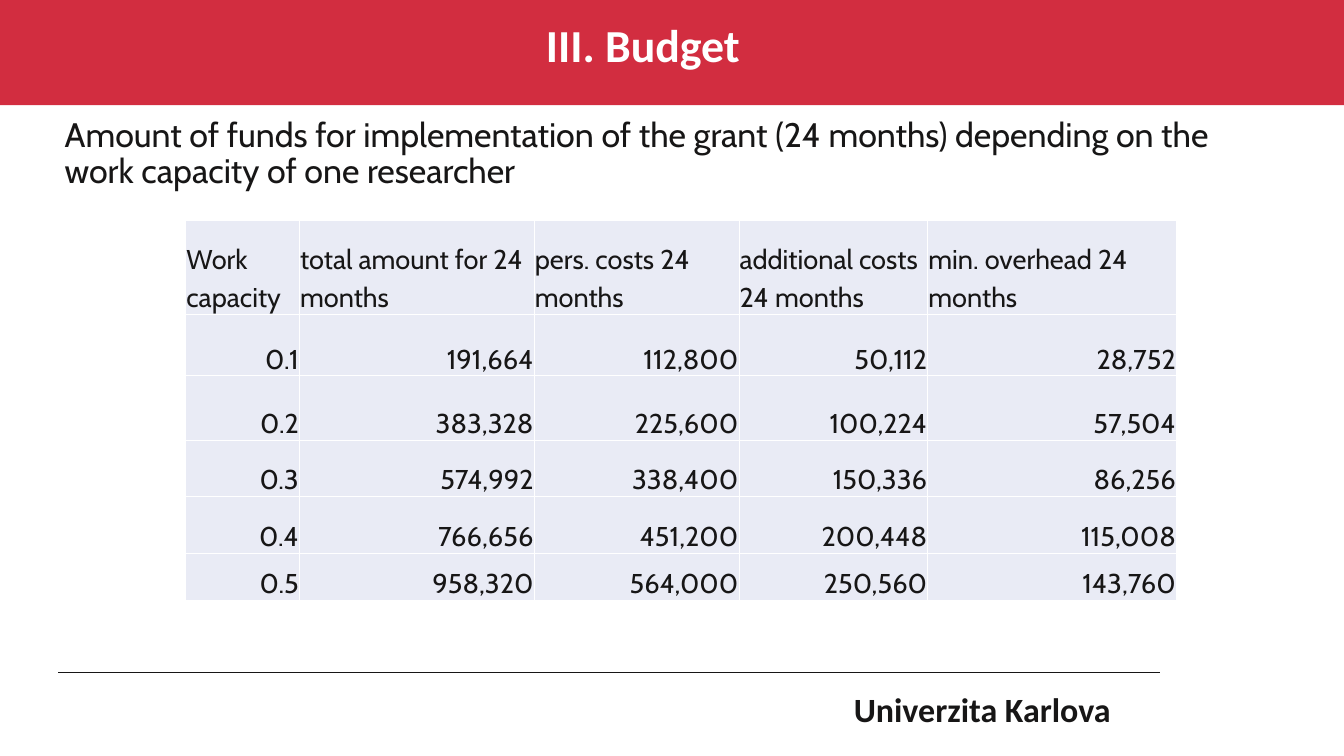
"""Build the grant budget slide with its table of funds by work capacity."""
from dataclasses import dataclass

from lxml.etree import SubElement
from pptx import Presentation
from pptx.dml.color import RGBColor
from pptx.enum.shapes import MSO_CONNECTOR, MSO_SHAPE
from pptx.enum.text import MSO_ANCHOR, MSO_AUTO_SIZE, PP_ALIGN
from pptx.oxml.ns import qn
from pptx.shapes.base import BaseShape
from pptx.slide import Slide
from pptx.table import _Cell as Cell
from pptx.text.text import TextFrame
from pptx.util import Inches, Length, Pt

GRID_COLUMNS, GRID_ROWS = 21.99, 12.37
TITLE_ONLY = 5


@dataclass(frozen=True)
class TextStyle:
    font: str
    size: float
    color: str
    bold: bool = False
    align: PP_ALIGN = PP_ALIGN.LEFT
    spacing: float = 1.0


@dataclass(frozen=True)
class Theme:
    red: str = "D22D40"
    ink: str = "171616"
    white: str = "FFFFFF"
    cell: str = "E9EBF5"
    title: TextStyle = TextStyle("Calibri", 54, "FFFFFF", True, PP_ALIGN.CENTER, 0.9)
    intro: TextStyle = TextStyle("Cabin", 40, "171616", spacing=0.9)
    school: TextStyle = TextStyle("Calibri", 40, "171616", True)
    heading: TextStyle = TextStyle("Cabin", 32, "171616", spacing=1.15)
    amount: TextStyle = TextStyle("Cabin", 32, "171616", align=PP_ALIGN.RIGHT, spacing=1.15)


@dataclass(frozen=True)
class Area:
    column: float
    row: float
    columns: float
    rows: float

    def box(self) -> tuple[Length, Length, Length, Length]:
        return (Inches(self.column), Inches(self.row),
                Inches(self.columns), Inches(self.rows))


@dataclass(frozen=True)
class BudgetColumn:
    heading: str
    columns: float
    step: int


THEME = Theme()
BAND = Area(0, 0, GRID_COLUMNS, 1.72)
TITLE = Area(0.28, 0.33, 20.48, 1.12)
INTRO = Area(0.41, 1.88, 20.57, 9.35)
TABLE = Area(3.04, 3.61, 16.21, 6.21)
FOOTER_LINE = Area(0.95, 11, 18.03, 0)
SCHOOL = Area(13.97, 11.26, 5.27, 0.9)

PERSONAL, ADDITIONAL, OVERHEAD = 112_800, 50_112, 28_752
AMOUNTS = [
    BudgetColumn("total amount for 24 months", 3.84, PERSONAL + ADDITIONAL + OVERHEAD),
    BudgetColumn("pers. costs 24 months", 3.35, PERSONAL),
    BudgetColumn("additional costs 24 months", 3.09, ADDITIONAL),
    BudgetColumn("min. overhead 24 months", 4.07, OVERHEAD),
]
CAPACITY_COLUMNS = 1.86
TABLE_ROWS = [1.53, 1.01, 1.06, 0.91, 0.93, 0.78]


def write(frame: TextFrame, text: str, style: TextStyle) -> None:
    frame.text = text
    para = frame.paragraphs[0]
    para.alignment = style.align
    para.line_spacing = style.spacing
    for span in para.runs:
        span.font.name = style.font
        span.font.size = Pt(style.size)
        span.font.bold = style.bold
        span.font.color.rgb = RGBColor.from_string(style.color)


def add_text(page: Slide, area: Area, text: str, style: TextStyle) -> BaseShape:
    box = page.shapes.add_textbox(*area.box())
    box.text_frame.word_wrap = True
    write(box.text_frame, text, style)
    return box


def add_title(page: Slide, text: str) -> None:
    title = page.shapes.title
    title.left, title.top, title.width, title.height = TITLE.box()
    title.text_frame.auto_size = MSO_AUTO_SIZE.NONE
    title.text_frame.vertical_anchor = MSO_ANCHOR.TOP
    write(title.text_frame, text, THEME.title)


def add_band(page: Slide) -> None:
    band = page.shapes.add_shape(MSO_SHAPE.RECTANGLE, *BAND.box())
    band.shadow.inherit = False
    band.fill.solid()
    band.fill.fore_color.rgb = RGBColor.from_string(THEME.red)
    band.line.fill.background()
    page.shapes.title.element.addprevious(band.element)


def add_intro(page: Slide, text: str) -> None:
    intro = add_text(page, INTRO, text, THEME.intro)
    properties = intro.text_frame.paragraphs[0]._p.get_or_add_pPr()
    properties.set("marL", str(Inches(0.55)))
    properties.set("indent", "0")


def add_footer(page: Slide, text: str) -> None:
    left, top, width, height = FOOTER_LINE.box()
    line = page.shapes.add_connector(
        MSO_CONNECTOR.STRAIGHT, left, top, left + width, top + height)
    line.line.color.rgb = RGBColor.from_string(THEME.ink)
    line.line.width = Pt(0.5)
    SubElement(line.element.spPr, qn("a:effectLst"))
    frame = add_text(page, SCHOOL, text, THEME.school).text_frame
    frame.margin_left = frame.margin_top = frame.margin_right = frame.margin_bottom = 0


def format_cell(cell: Cell, text: str, style: TextStyle) -> None:
    write(cell.text_frame, text, style)
    cell.vertical_anchor = MSO_ANCHOR.BOTTOM
    cell.margin_left = cell.margin_top = cell.margin_right = Inches(0.01)
    cell.margin_bottom = 0
    properties = cell._tc.get_or_add_tcPr()
    for side in ("lnL", "lnR", "lnT", "lnB"):
        border = SubElement(properties, qn(f"a:{side}"), w=str(Pt(1)))
        fill = SubElement(border, qn("a:solidFill"))
        SubElement(fill, qn("a:srgbClr"), val=THEME.white)
    cell.fill.solid()
    cell.fill.fore_color.rgb = RGBColor.from_string(THEME.cell)


def add_budget(page: Slide) -> None:
    headings = ["Work capacity"] + [amount.heading for amount in AMOUNTS]
    widths = [CAPACITY_COLUMNS] + [amount.columns for amount in AMOUNTS]
    lines = [headings] + [
        [f"{tenths / 10}"] + [f"{amount.step * tenths:,}" for amount in AMOUNTS]
        for tenths in range(1, len(TABLE_ROWS))
    ]
    table = page.shapes.add_table(len(lines), len(headings), *TABLE.box()).table
    table.first_row = table.horz_banding = False
    for column, width in zip(table.columns, widths):
        column.width = Inches(width)
    for index, (row, height, texts) in enumerate(zip(table.rows, TABLE_ROWS, lines)):
        row.height = Inches(height)
        for cell, text in zip(row.cells, texts):
            format_cell(cell, text, THEME.amount if index else THEME.heading)


def main() -> None:
    deck = Presentation()
    deck.slide_width, deck.slide_height = Inches(GRID_COLUMNS), Inches(GRID_ROWS)
    page = deck.slides.add_slide(deck.slide_layouts[TITLE_ONLY])
    add_title(page, "III. Budget")
    add_band(page)
    add_footer(page, "Univerzita Karlova")
    add_intro(page, "Amount of funds for implementation of the grant (24 months) "
                    "depending on the work capacity of one researcher")
    add_budget(page)
    deck.save("out.pptx")


if __name__ == "__main__":
    main()
